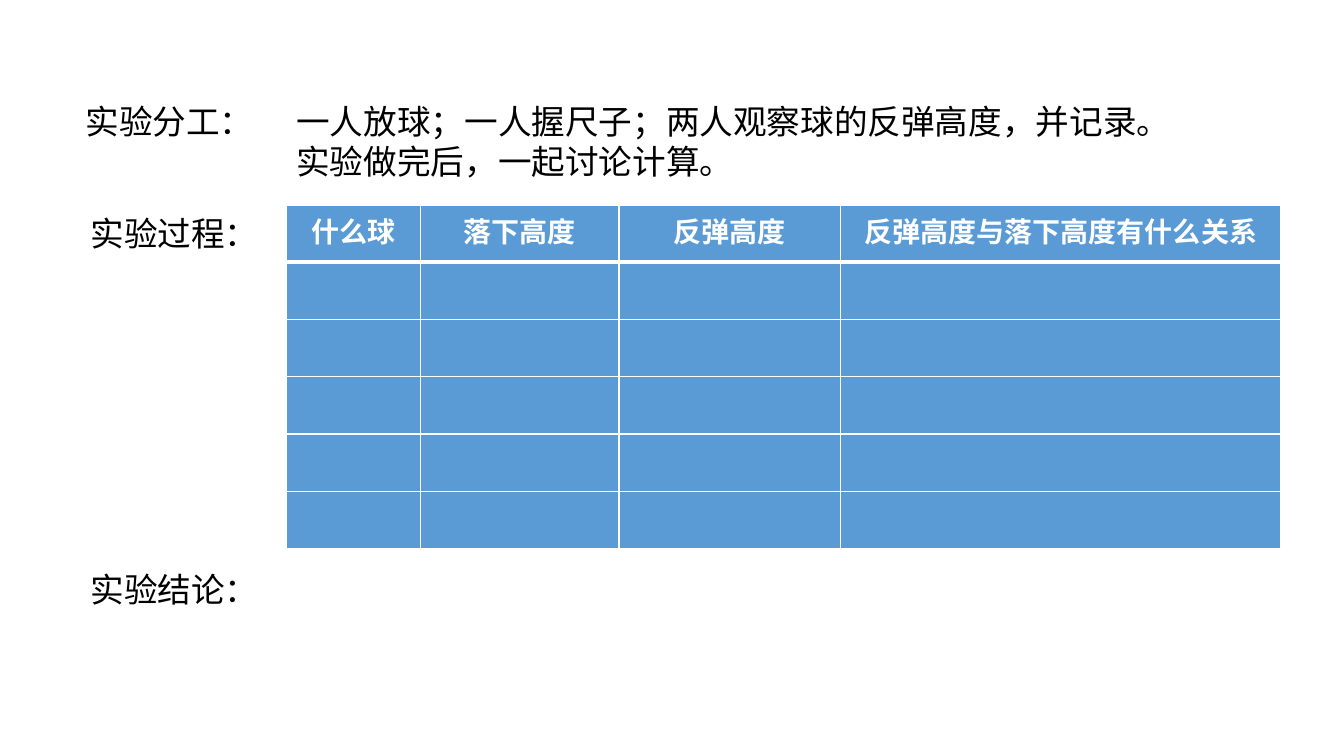
from lxml import etree
from pptx import Presentation, util as u
from pptx.dml.color import RGBColor
from pptx.enum import text
from pptx.oxml import ns

COLUMNS, ROWS = 160, 90
LABEL_COLUMN, CONTENT_COLUMN = 9.6, 34.1
DUTY_ROW, PROCESS_ROW, CONCLUSION_ROW = 11, 24.4, 66.7
DUTIES = [
    "一人放球；一人握尺子；两人观察球的反弹高度，并记录。",
    "实验做完后，一起讨论计算。",
]
HEADINGS = ["什么球", "落下高度", "反弹高度", "反弹高度与落下高度有什么关系"]
HEADING_WIDTHS = [16, 23.6, 26.4, 52.4]
BALL_COUNT = 5


def color(hex_string):
    return RGBColor.from_string(hex_string)


def write(frame, lines, size=24, ink="000000", bold=False,
          align=text.PP_ALIGN.LEFT, spacing=None):
    """Fill a text frame with one paragraph per line."""
    for index, line in enumerate(lines):
        paragraph = frame.add_paragraph() if index else frame.paragraphs[0]
        paragraph.alignment = align
        if spacing:
            paragraph.line_spacing = u.Pt(spacing)
        run = paragraph.add_run()
        run.text = line
        run.font.size, run.font.bold = u.Pt(size), bold
        run.font.color.rgb = color(ink)
        run.font.name = Sheet.FONT
        east_asian = etree.SubElement(run.font._element, ns.qn("a:ea"))
        east_asian.set("typeface", Sheet.FONT)


class Sheet:
    """Style and slide of the experiment record; lengths are grid units."""
    FONT = "Noto Sans CJK SC"
    BLUE, WHITE = "5B9BD5", "FFFFFF"

    def __init__(self, deck):
        self.slide = deck.slides.add_slide(deck.slide_layouts[6])
        self.column = deck.slide_width / COLUMNS
        self.row = deck.slide_height / ROWS

    def place(self, left, top, width, height):
        return [u.Emu(round(length * unit)) for length, unit in
                zip((left, top, width, height), (self.column, self.row) * 2)]

    def text_box(self, lines, left, top, width=22, height=6):
        frame = self.slide.shapes.add_textbox(
            *self.place(left, top, width, height)).text_frame
        frame.word_wrap = True
        frame.auto_size = text.MSO_AUTO_SIZE.SHAPE_TO_FIT_TEXT
        frame.margin_top, frame.margin_bottom = u.Inches(0.08), u.Inches(0.02)
        frame.margin_right = 0
        write(frame, lines, spacing=29)

    def border(self, cell, side, width):
        line = etree.SubElement(cell._tc.get_or_add_tcPr(),
                                ns.qn(f"a:ln{side}"), w=str(u.Pt(width)))
        fill = etree.SubElement(line, ns.qn("a:solidFill"))
        etree.SubElement(fill, ns.qn("a:srgbClr"), val=self.WHITE)

    def record_table(self, headings, widths, blank_rows, left, top, row_height):
        count = blank_rows + 1
        table = self.slide.shapes.add_table(
            count, len(headings),
            *self.place(left, top, sum(widths), row_height * count)).table
        for column, width in zip(table.columns, widths):
            column.width = u.Emu(round(width * self.column))
        for r in range(count):
            for c, heading in enumerate(headings):
                cell = table.cell(r, c)
                for side in "LRTB":
                    heavy = (r, side) in ((0, "B"), (1, "T"))
                    self.border(cell, side, 3 if heavy else 1)
                cell.fill.solid()
                cell.fill.fore_color.rgb = color(self.BLUE)
                if r == 0:
                    write(cell.text_frame, [heading], size=20, ink=self.WHITE,
                          bold=True, align=text.PP_ALIGN.CENTER)


def main():
    deck = Presentation()
    deck.slide_width, deck.slide_height = u.Inches(13.33), u.Inches(7.5)
    sheet = Sheet(deck)
    sheet.text_box(["实验分工："], 9, DUTY_ROW)
    sheet.text_box(["实验过程："], LABEL_COLUMN, PROCESS_ROW)
    sheet.text_box(["实验结论："], LABEL_COLUMN, CONCLUSION_ROW)
    sheet.text_box(DUTIES, CONTENT_COLUMN, DUTY_ROW, width=115.5, height=10.9)
    sheet.record_table(HEADINGS, HEADING_WIDTHS, BALL_COUNT,
                       CONTENT_COLUMN, PROCESS_ROW, row_height=6.82)
    deck.save("out.pptx")


if __name__ == "__main__":
    main()
